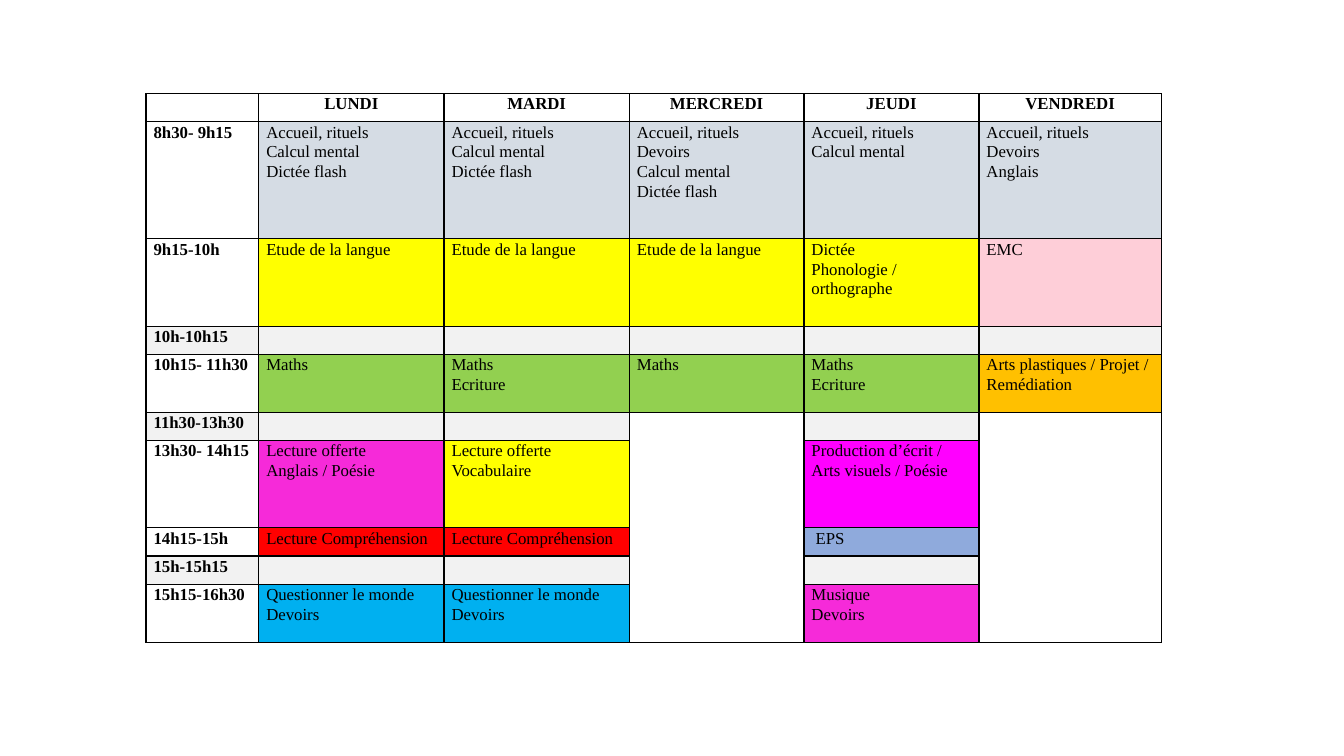
from dataclasses import dataclass

from lxml import etree
from pptx import Presentation
from pptx.dml.color import RGBColor
from pptx.enum.text import MSO_ANCHOR, PP_ALIGN
from pptx.oxml.ns import qn
from pptx.util import Cm, Pt

LEFT, MID = PP_ALIGN.LEFT, PP_ALIGN.CENTER
TOP = MSO_ANCHOR.TOP


@dataclass(frozen=True)
class Theme:
    font: str = "Times New Roman"
    size: int = 12
    space: float = 1.07
    line: float = 1
    ink: str = "000000"
    grey: str = "F2F2F2"
    steel: str = "D5DCE4"
    yellow: str = "FFFF00"
    rose: str = "FECED8"
    green: str = "92D050"
    amber: str = "FFC000"
    pink: str = "F62AD9"
    fuchsia: str = "FF00FF"
    red: str = "FF0000"
    blue: str = "8FAADC"
    sky: str = "00B0F0"


T = Theme()
BOX = (3.68, 2.36, 25.59, 13.8)
WIDTHS = (2.84, 4.67, 4.67, 4.4, 4.41, 4.6)
DAYS = ("LUNDI", "MARDI", "MERCREDI", "JEUDI", "VENDREDI")
LOW, MEDIUM, HIGH, TALL = 0.71, 1.46, 2.2, 2.95
NOON, LAST = 5, 9
FREE = (3, 5)

BREAK = ("", T.grey)
NONE = ("", None)
HELLO = ("Accueil, rituels\nCalcul mental\nDictée flash", T.steel)
LANG = ("Etude de la langue", T.yellow)
MATHS = ("Maths", T.green)
WRITE = ("Maths\nEcriture", T.green)
READ = ("Lecture Compréhension", T.red)
WORLD = ("Questionner le monde\nDevoirs", T.sky)

ROWS = (
    (LOW, NONE, *((day, None) for day in DAYS)),
    (TALL, ("8h30- 9h15", None), HELLO, HELLO,
     ("Accueil, rituels\nDevoirs\nCalcul mental\nDictée flash", T.steel),
     ("Accueil, rituels\nCalcul mental", T.steel),
     ("Accueil, rituels\nDevoirs\nAnglais", T.steel)),
    (HIGH, ("9h15-10h", None), LANG, LANG, LANG,
     ("Dictée\nPhonologie / orthographe", T.yellow), ("EMC", T.rose)),
    (LOW, ("10h-10h15", T.grey), *[BREAK] * 5),
    (MEDIUM, ("10h15- 11h30", None), MATHS, WRITE, MATHS, WRITE,
     ("Arts plastiques / Projet / Remédiation", T.amber)),
    (LOW, ("11h30-13h30", T.grey), BREAK, BREAK, NONE, BREAK, NONE),
    (HIGH, ("13h30- 14h15", None),
     ("Lecture offerte\nAnglais / Poésie", T.pink),
     ("Lecture offerte\nVocabulaire", T.yellow), NONE,
     ("Production d’écrit / Arts visuels / Poésie", T.fuchsia), NONE),
    (LOW, ("14h15-15h", None), READ, READ, NONE, (" EPS", T.blue), NONE),
    (LOW, ("15h-15h15", T.grey), BREAK, BREAK, NONE, BREAK, NONE),
    (MEDIUM, ("15h15-16h30", None), WORLD, WORLD, NONE,
     ("Musique\nDevoirs", T.pink), NONE),
)


def apply(item, values):
    for name, value in values.items():
        setattr(item, name, value)


def frame(cell):
    props = cell._tc.get_or_add_tcPr()
    for side in ("lnL", "lnR", "lnT", "lnB"):
        line = etree.SubElement(props, qn(f"a:{side}"), w=str(Pt(T.line)))
        fill = etree.SubElement(line, qn("a:solidFill"))
        etree.SubElement(fill, qn("a:srgbClr"), val=T.ink)


def paint(cell, color):
    if color:
        cell.fill.solid()
        cell.fill.fore_color.rgb = RGBColor.from_string(color)
    else:
        cell.fill.background()


def write(cell, text, bold, align):
    apply(cell, {"margin_left": Cm(0.19), "margin_right": Cm(0.19),
                 "margin_top": 0, "margin_bottom": 0,
                 "vertical_anchor": TOP, "text": text})
    for para in cell.text_frame.paragraphs:
        apply(para, {"alignment": align, "line_spacing": T.space})
        for run in para.runs:
            apply(run.font, {"name": T.font, "size": Pt(T.size), "bold": bold})
            run.font.color.rgb = RGBColor.from_string(T.ink)
        if not para.runs:
            para._p.get_or_add_endParaRPr().set("sz", str(T.size * 100))


def timetable(slide, box):
    shape = slide.shapes.add_table(len(ROWS), len(WIDTHS), *map(Cm, box))
    table = shape.table
    apply(table, {"first_row": False, "horz_banding": False})
    for col, width in zip(table.columns, WIDTHS):
        col.width = Cm(width)
    for r, (height, *cells) in enumerate(ROWS):
        table.rows[r].height = Cm(height)
        for c, (text, color) in enumerate(cells):
            cell = table.cell(r, c)
            frame(cell)
            paint(cell, color)
            write(cell, text, r == 0 or c == 0, LEFT if r else MID)
    for c in FREE:
        table.cell(NOON, c).merge(table.cell(LAST, c))


def main():
    deck = Presentation()
    apply(deck, {"slide_width": Cm(33.87), "slide_height": Cm(19.05)})
    slide = deck.slides.add_slide(deck.slide_layouts[6])
    timetable(slide, BOX)
    deck.save("out.pptx")


if __name__ == "__main__":
    main()
